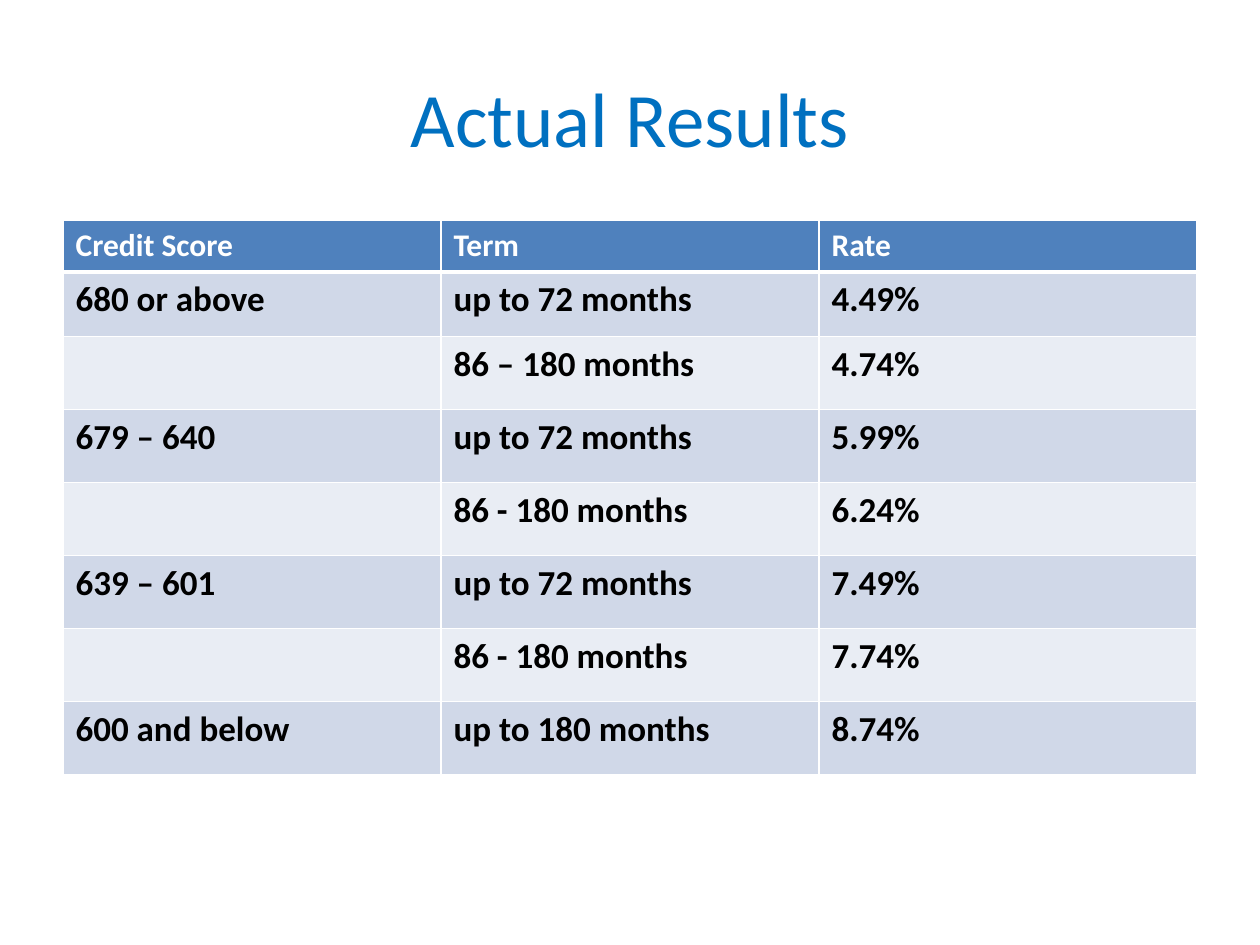
from typing import NamedTuple

from pptx import Presentation
from pptx.dml.color import RGBColor
from pptx.enum.text import MSO_ANCHOR as Anchor, PP_ALIGN as Align
from pptx.oxml.ns import qn
from pptx.util import Inches, Pt
from lxml.etree import SubElement

FONT = "Calibri"
TITLE_BLUE = RGBColor(0x00, 0x70, 0xC0)
HEADER_BLUE = RGBColor(0x4F, 0x81, 0xBD)
BAND_DARK = RGBColor(0xD0, 0xD8, 0xE8)
BAND_LIGHT = RGBColor(0xE9, 0xED, 0xF4)
WHITE = RGBColor(0xFF, 0xFF, 0xFF)
BLACK = RGBColor(0x00, 0x00, 0x00)

LEFT, WIDTH = Inches(0.5), Inches(9)
HEADER_HEIGHT, FIRST_RATE_HEIGHT, RATE_HEIGHT = Inches(0.41), Inches(0.51), Inches(0.58)


class LoanRate(NamedTuple):
    score: str
    term: str
    rate: str


class CellStyle(NamedTuple):
    fill: RGBColor
    color: RGBColor
    size: int
    bottom_border: int


HEADER = LoanRate("Credit Score", "Term", "Rate")
RATES = [
    LoanRate("680 or above\u00a0", "up to 72 months", "4.49%"),
    LoanRate("", "86 – 180 months", "4.74%"),
    LoanRate("679 – 640", "up to 72 months", "5.99%"),
    LoanRate("", "86 - 180 months", "6.24%"),
    LoanRate("639 – 601", "up to 72 months", "7.49%"),
    LoanRate("", "86 - 180 months", "7.74%"),
    LoanRate("600 and below", "up to 180 months", "8.74%"),
]
HEADER_STYLE = CellStyle(HEADER_BLUE, WHITE, 18, 3)
BAND_STYLES = [CellStyle(fill, BLACK, 20, 1) for fill in (BAND_DARK, BAND_LIGHT)]


def add_span(para, text: str, size: int, color: RGBColor, bold: bool = False) -> None:
    span = para.add_run()
    span.text = text
    span.font.name = FONT
    span.font.size = Pt(size)
    span.font.bold = bold
    span.font.color.rgb = color


def set_borders(cell, widths: dict[str, int]) -> None:
    """Give the cell white borders; widths are in points by side tag."""
    properties = cell._tc.get_or_add_tcPr()
    for position, (side, width) in enumerate(widths.items()):
        line = properties.makeelement(qn(f"a:{side}"), {"w": str(Pt(width))})
        fill = SubElement(line, qn("a:solidFill"))
        SubElement(fill, qn("a:srgbClr"), val=str(WHITE))
        properties.insert(position, line)


def fill_row(table, index: int, entry: LoanRate, style: CellStyle, top_border: int) -> None:
    for column, text in enumerate(entry):
        cell = table.cell(index, column)
        cell.fill.solid()
        cell.fill.fore_color.rgb = style.fill
        set_borders(cell, {"lnL": 1, "lnR": 1, "lnT": top_border, "lnB": style.bottom_border})
        if text:
            add_span(cell.text_frame.paragraphs[0], text, style.size, style.color, bold=True)


def add_title(page, text: str) -> None:
    box = page.shapes.add_textbox(LEFT, Inches(0.3), WIDTH, Inches(1.25))
    frame = box.text_frame
    frame.word_wrap = True
    frame.vertical_anchor = Anchor.MIDDLE
    para = frame.paragraphs[0]
    para.alignment = Align.CENTER
    add_span(para, text, 44, TITLE_BLUE)


def add_rate_table(page) -> None:
    heights = [HEADER_HEIGHT, FIRST_RATE_HEIGHT] + [RATE_HEIGHT] * (len(RATES) - 1)
    table = page.shapes.add_table(
        len(heights), len(HEADER), LEFT, Inches(1.75), WIDTH, sum(heights)
    ).table
    for row, height in zip(table.rows, heights):
        row.height = height
    fill_row(table, 0, HEADER, HEADER_STYLE, top_border=1)
    above = HEADER_STYLE
    for index, entry in enumerate(RATES):
        style = BAND_STYLES[index % 2]
        fill_row(table, index + 1, entry, style, above.bottom_border)
        above = style


def main() -> None:
    deck = Presentation()
    deck.slide_width, deck.slide_height = Inches(10), Inches(7.5)
    page = deck.slides.add_slide(deck.slide_layouts[6])
    add_title(page, "Actual Results")
    add_rate_table(page)
    deck.save("out.pptx")


if __name__ == "__main__":
    main()
